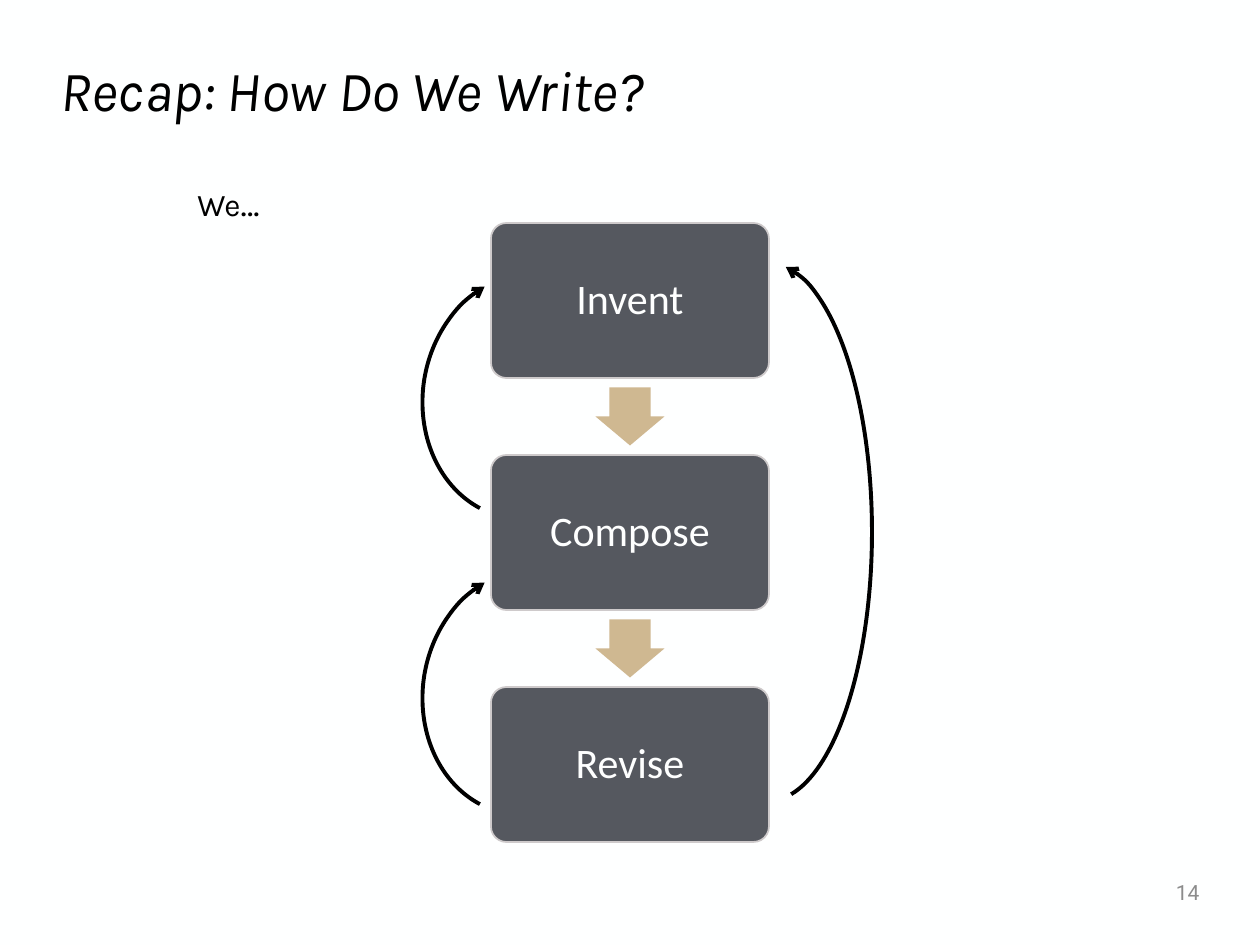
from lxml import etree
from pptx import Presentation
from pptx import util as u
from pptx.dml.color import RGBColor
from pptx.enum import shapes, text
from pptx.oxml.ns import qn

PX = 914400 // 126  # EMU in one px
BACKGROUND = RGBColor(0xFE, 0xFF, 0xFF)
BLACK = RGBColor(0x00, 0x00, 0x00)
GREY = RGBColor(0x8C, 0x8C, 0x8C)
SLATE = RGBColor(0x55, 0x58, 0x5F)
EDGE = RGBColor(0xCE, 0xCA, 0xCB)
TAN = RGBColor(0xCF, 0xB8, 0x91)
LEFT, CENTER, RIGHT = text.PP_ALIGN.LEFT, text.PP_ALIGN.CENTER, text.PP_ALIGN.RIGHT
TOP, MIDDLE = text.MSO_ANCHOR.TOP, text.MSO_ANCHOR.MIDDLE


class Deck:
    """Holds the style and the current slide."""

    def __init__(self):
        self.prs = Presentation()
        self.prs.slide_width, self.prs.slide_height = u.Inches(10), u.Inches(7.5)
        self.slide = self.prs.slides.add_slide(self.prs.slide_layouts[6])
        fill = self.slide.background.fill
        fill.solid()
        fill.fore_color.rgb = BACKGROUND

    def set_text(self, frame, runs, font, color, align, anchor, italic=False, spacing=0.9):
        frame.word_wrap = True
        frame.vertical_anchor = anchor
        line = frame.paragraphs[0]
        line.alignment, line.line_spacing = align, spacing
        for words, size in runs:
            run = line.add_run()
            run.text = words
            run.font.name, run.font.size = font, u.Pt(size)
            run.font.color.rgb, run.font.italic = color, italic

    def label(self, box, runs, font, color, align=LEFT, anchor=TOP, **style):
        frame = self.slide.shapes.add_textbox(*(n * PX for n in box)).text_frame
        self.set_text(frame, runs, font, color, align, anchor, **style)

    def shape(self, kind, box, adjust, rotation=0):
        shape = self.slide.shapes.add_shape(kind, *(n * PX for n in box))
        shape.shadow.inherit = False
        shape.rotation = rotation
        for i, value in enumerate(adjust):
            shape.adjustments[i] = value
        return shape

    def step(self, box, words):
        step = self.shape(shapes.MSO_SHAPE.ROUNDED_RECTANGLE, box, [0.1])
        step.fill.solid()
        step.fill.fore_color.rgb = SLATE
        step.line.color.rgb, step.line.width = EDGE, u.Pt(1)
        self.set_text(step.text_frame, [(words, 24)], "Calibri", BACKGROUND, CENTER, MIDDLE)

    def down_arrow(self, box):
        arrow = self.shape(shapes.MSO_SHAPE.RIGHT_ARROW, box, [0.6, 0.5], 90)
        arrow.fill.solid()
        arrow.fill.fore_color.rgb = TAN
        arrow.line.fill.background()

    def loop(self, box, adjust, end, rotation=0):
        arc = self.shape(shapes.MSO_SHAPE.ARC, box, adjust, rotation)
        arc.fill.background()
        arc.line.color.rgb, arc.line.width = BLACK, u.Pt(2.25)
        outline = arc.element.spPr.find(qn("a:ln"))
        etree.SubElement(outline, qn(f"a:{end}"), type="arrow")


def main():
    deck = Deck()

    # Title, page number and lead-in
    deck.label((48, 53, 1164, 81), [("Recap: How Do We Write?", 32.4)],
               "Karla", BLACK, anchor=MIDDLE, italic=True)
    deck.label((1061, 867, 151, 50), [("14", 12)], "Roboto", GREY, RIGHT, MIDDLE, spacing=1)
    deck.label((185, 180, 1165, 50), [("We", 18), ("…", 20)], "Karla", BLACK)

    # Writing steps with an arrow between each pair
    first_top, pitch = 223, 232
    steps = ["Invent", "Compose", "Revise"]
    for i, words in enumerate(steps):
        top = first_top + i * pitch
        deck.step((491, top, 278, 155), words)
        if i < len(steps) - 1:
            deck.down_arrow((601, top + 159, 58, 69))

    # Loops back to earlier steps
    deck.loop((664, 263, 208, 538), [164.31, 50.97], "headEnd")
    for top in (273, 569):
        deck.loop((423, top, 208, 246), [170.32, 35.96], "tailEnd", 188.9)

    deck.prs.save("out.pptx")


if __name__ == "__main__":
    main()
